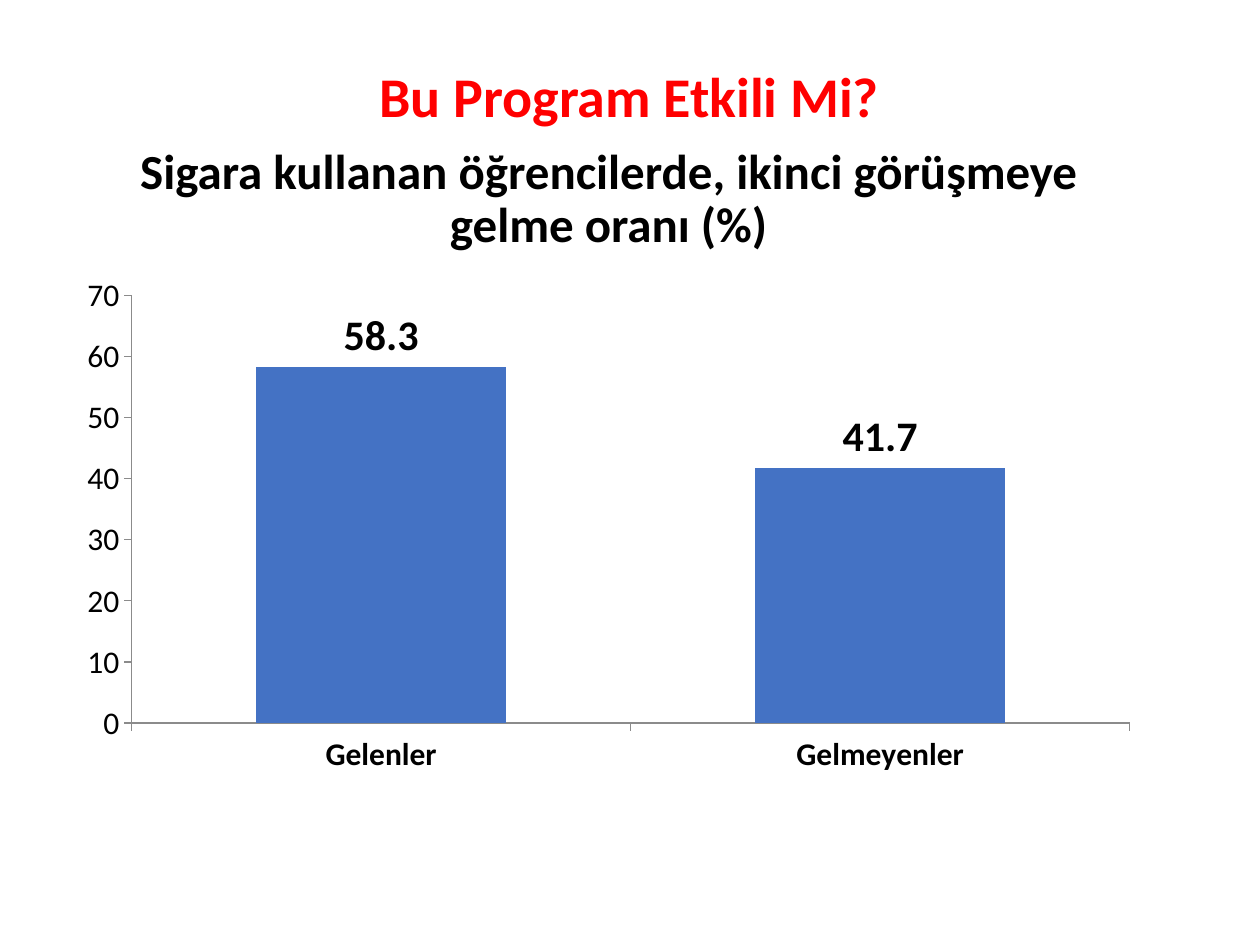
from typing import NamedTuple

from pptx import Presentation
from pptx.chart.data import CategoryChartData as Data
from pptx.dml.color import RGBColor as Color
from pptx.enum.chart import XL_CHART_TYPE as Kind, XL_LABEL_POSITION as Spot, XL_TICK_MARK as Tick
from pptx.enum.text import MSO_ANCHOR as Anchor, PP_ALIGN as Align
from pptx.slide import Slide
from pptx.util import Pt

FACE = "Calibri"
BLACK, RED, BLUE, GRAY = "000000", "FF0000", "4472C4", "8B8B8B"
LEFT, WIDTH = 37.5, 620.5


class Head(NamedTuple):
    text: str
    left: float
    top: float
    size: float
    tone: str


HEADS = [
    Head("Bu Program Etkili Mi?", 49.5, 29, 32, RED),
    Head("Sigara kullanan öğrencilerde, ikinci görüşmeye gelme oranı (%)", LEFT, 86.5, 28, BLACK),
]
RATES = {"Gelenler": 58.3, "Gelmeyenler": 41.7}


def paint(part, tone: str) -> None:
    part.rgb = Color.from_string(tone)


def style(font, size: float, tone: str, bold: bool) -> None:
    font.name = FACE
    font.size = Pt(size)
    font.bold = bold
    paint(font.color, tone)


def draw_head(slide: Slide, head: Head) -> None:
    box = slide.shapes.add_textbox(Pt(head.left), Pt(head.top), Pt(WIDTH), Pt(56))
    frame = box.text_frame
    frame.word_wrap = True
    frame.vertical_anchor = Anchor.MIDDLE
    para = frame.paragraphs[0]
    para.alignment = Align.CENTER
    para.line_spacing = 0.9
    run = para.add_run()
    run.text = head.text
    style(run.font, head.size, head.tone, True)


def draw_axis(axis, bold: bool) -> None:
    axis.has_major_gridlines = False
    axis.major_tick_mark = Tick.OUTSIDE
    axis.minor_tick_mark = Tick.NONE
    axis.format.line.width = Pt(0.75)
    axis.format.line.fill.solid()
    paint(axis.format.line.color, GRAY)
    style(axis.tick_labels.font, 18, BLACK, bold)


def draw_chart(slide: Slide, rates: dict[str, float]) -> None:
    data = Data()
    data.categories = list(rates)
    data.add_series("Series 1", list(rates.values()))
    chart = slide.shapes.add_chart(
        Kind.COLUMN_CLUSTERED, Pt(LEFT), Pt(152), Pt(WIDTH), Pt(296), data
    ).chart
    style(chart.font, 18, BLACK, False)
    chart.has_title = False
    chart.has_legend = False
    draw_axis(chart.category_axis, True)
    draw_axis(chart.value_axis, False)
    chart.value_axis.minimum_scale = 0
    chart.value_axis.maximum_scale = 70
    chart.value_axis.major_unit = 10

    plot = chart.plots[0]
    plot.gap_width = 100
    plot.vary_by_categories = False
    bars = plot.series[0]
    bars.format.fill.solid()
    paint(bars.format.fill.fore_color, BLUE)
    labels = bars.data_labels
    labels.show_value = True
    labels.position = Spot.OUTSIDE_END
    style(labels.font, 24, BLACK, True)


def main() -> None:
    deck = Presentation()
    deck.slide_width, deck.slide_height = Pt(720), Pt(540)
    slide = deck.slides.add_slide(deck.slide_layouts[6])
    draw_chart(slide, RATES)
    for head in HEADS:
        draw_head(slide, head)
    deck.save("out.pptx")


if __name__ == "__main__":
    main()
